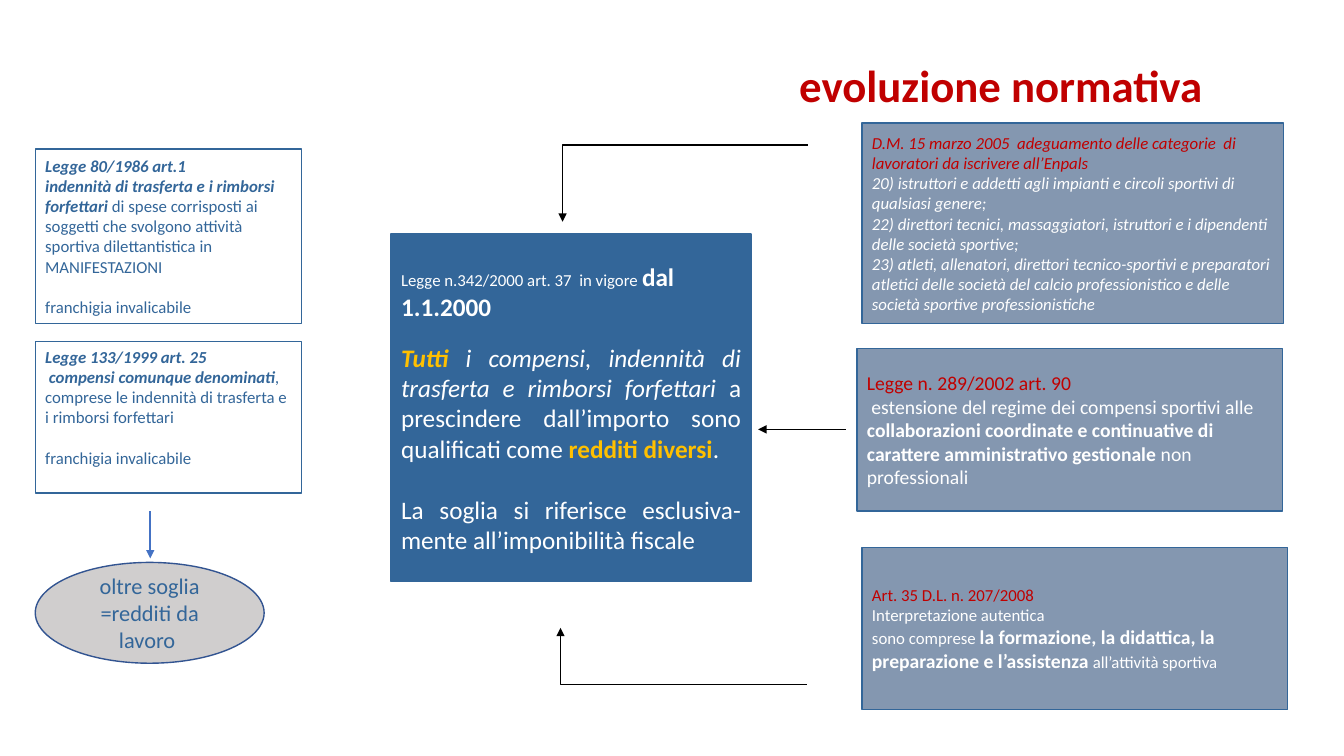
from lxml import etree
from pptx import Presentation
from pptx.dml.color import RGBColor
from pptx.enum.shapes import MSO_CONNECTOR, MSO_SHAPE
from pptx.enum.text import MSO_ANCHOR, PP_ALIGN
from pptx.oxml.ns import qn
from pptx.util import Inches, Pt

RECTANGLE, OVAL = MSO_SHAPE.RECTANGLE, MSO_SHAPE.OVAL
STRAIGHT, ELBOW = MSO_CONNECTOR.STRAIGHT, MSO_CONNECTOR.ELBOW
LEFT, CENTER, RIGHT, JUSTIFY = (PP_ALIGN.LEFT, PP_ALIGN.CENTER,
                                PP_ALIGN.RIGHT, PP_ALIGN.JUSTIFY)
MIDDLE = MSO_ANCHOR.MIDDLE

WHITE = RGBColor(0xFF, 0xFF, 0xFF)
BLACK = RGBColor(0x00, 0x00, 0x00)
RED = RGBColor(0xC0, 0x00, 0x00)
GOLD = RGBColor(0xFF, 0xC0, 0x00)
BLUE = RGBColor(0x33, 0x66, 0x99)
SLATE = RGBColor(0x84, 0x97, 0xB0)
GREY = RGBColor(0xD0, 0xCE, 0xCE)
NAVY = RGBColor(0x32, 0x54, 0x91)
ARROW_BLUE = RGBColor(0x44, 0x72, 0xC4)


def span(text, size=12, color=WHITE, bold=False, italic=False):
    return text, size, color, bold, italic


def para(*spans, align=LEFT, before=0):
    return spans, align, before


class SlideBuilder:
    font = "Calibri"

    def __init__(self, deck):
        self.page = deck.slides.add_slide(deck.slide_layouts[5])

    def add_text(self, frame, paras):
        frame.word_wrap = True
        frame.vertical_anchor = MIDDLE
        for index, (spans, align, before) in enumerate(paras):
            paragraph = frame.paragraphs[0] if index == 0 else frame.add_paragraph()
            paragraph.alignment = align
            paragraph.space_before = Pt(before)
            for text, size, color, bold, italic in spans:
                run = paragraph.add_run()
                run.text = text
                run.font.name = self.font
                run.font.size = Pt(size)
                run.font.bold = bold
                run.font.italic = italic
                run.font.color.rgb = color

    def title(self, place, paras):
        title = self.page.shapes.title
        title.left, title.top, title.width, title.height = map(Inches, place)
        self.add_text(title.text_frame, paras)
        title.text_frame.paragraphs[0].line_spacing = 0.9

    def box(self, place, fill, paras, line=BLUE, shape=RECTANGLE, bottom=0.05):
        box = self.page.shapes.add_shape(shape, *map(Inches, place))
        box.shadow.inherit = False
        box.fill.solid()
        box.fill.fore_color.rgb = fill
        box.line.color.rgb = line
        box.line.width = Pt(1)
        box.text_frame.margin_bottom = Inches(bottom)
        self.add_text(box.text_frame, paras)

    def arrow(self, start, end, kind=STRAIGHT, color=BLACK, width=1):
        arrow = self.page.shapes.add_connector(kind, *map(Inches, start + end))
        arrow.line.color.rgb = color
        arrow.line.width = Pt(width)
        properties = arrow._element.spPr
        etree.SubElement(properties.find(qn("a:ln")), qn("a:tailEnd"), type="triangle")
        etree.SubElement(properties, qn("a:effectLst"))
        if kind == ELBOW:  # turn right above or below the arrowhead
            guides = properties.find(qn("a:prstGeom")).find(qn("a:avLst"))
            etree.SubElement(guides, qn("a:gd"), name="adj1", fmla="val 100000")


def main():
    deck = Presentation()
    deck.slide_width, deck.slide_height = Inches(13.33), Inches(7.5)
    slide = SlideBuilder(deck)

    slide.title((0.23, 0.45, 11.9, 0.84), [
        para(span("evoluzione normativa ", 32, RED, bold=True), align=RIGHT)])

    # Earlier laws, on the left
    threshold = para(span("franchigia invalicabile", color=BLUE), before=14.6)
    slide.box((0.35, 1.48, 2.64, 1.73), WHITE, [
        para(span("Legge 80/1986 art.1", 12, BLUE, True, True)),
        para(span("indennità di trasferta e i rimborsi forfettari ", 12, BLUE, True, True),
             span("di spese corrisposti ai soggetti che svolgono attività sportiva "
                  "dilettantistica in MANIFESTAZIONI", color=BLUE)),
        threshold])
    slide.box((0.35, 3.39, 2.64, 1.5), WHITE, [
        para(span("Legge 133/1999 art. 25", 12, BLUE, True, True)),
        para(span(" ", color=BLUE),
             span("compensi comunque denominati", 12, BLUE, True, True),
             span(",", color=BLUE, italic=True),
             span(" comprese le indennità di trasferta e i rimborsi forfettari",
                  color=BLUE)),
        threshold], bottom=0.25)

    # Law in force, in the centre
    slide.box((3.88, 2.32, 3.57, 3.45), BLUE, [
        para(span("Legge n.342/2000 art. 37  in vigore "),
             span("dal 1.1.2000", 18, bold=True)),
        para(span("Tutti ", 18, GOLD, True, True),
             span("i compensi, indennità di trasferta e rimborsi forfettari ", 18,
                  italic=True),
             span("a prescindere dall’importo sono qualificati come ", 18),
             span("redditi diversi", 18, GOLD, bold=True),
             span(". ", 18), align=JUSTIFY, before=14.6),
        para(span("La soglia si riferisce esclusiva-mente all’imponibilità fiscale ", 18),
             align=JUSTIFY, before=22)])

    # Later provisions, on the right
    slide.box((8.55, 1.22, 4.18, 1.99), SLATE, [
        para(span("D.M. 15 marzo 2005  adeguamento delle categorie  di lavoratori "
                  "da iscrivere all’Enpals", color=RED, italic=True)),
        para(span("20) istruttori e addetti agli impianti e circoli sportivi di "
                  "qualsiasi genere;", italic=True)),
        para(span("22) direttori tecnici, massaggiatori, istruttori e i dipendenti "
                  "delle società sportive;", italic=True)),
        para(span("23) atleti, allenatori, direttori tecnico-sportivi e preparatori "
                  "atletici delle società del calcio professionistico e delle società "
                  "sportive professionistiche", italic=True))])
    slide.box((8.5, 3.46, 4.22, 1.61), SLATE, [
        para(span("Legge n. 289/2002 art. 90", 14, RED)),
        para(span(" estensione del regime dei compensi sportivi alle ", 14),
             span("collaborazioni coordinate e continuative di carattere "
                  "amministrativo gestionale ", 14, bold=True),
             span("non professionali", 14))])
    slide.box((8.55, 5.43, 4.22, 1.61), SLATE, [
        para(span("Art. 35 D.L. n. 207/2008", color=RED)),
        para(span("Interpretazione autentica")),
        para(span("sono comprese "),
             span("la formazione, la didattica, la preparazione e l’assistenza", 14,
                  bold=True),
             span(" all’attività sportiva"))])

    # Arrows towards the central law
    slide.arrow((8.39, 4.26), (7.52, 4.26))
    slide.arrow((8.01, 1.44), (5.58, 2.2), ELBOW)
    slide.arrow((8, 6.79), (5.56, 6.23), ELBOW)

    # Outcome above the threshold
    slide.arrow((1.49, 5.07), (1.49, 5.54), color=ARROW_BLUE, width=1.5)
    slide.box((0.35, 5.58, 2.27, 1), GREY, [
        para(span("oltre soglia =redditi da lavoro ", 16, BLUE), align=CENTER)],
        line=NAVY, shape=OVAL)

    deck.save("out.pptx")


if __name__ == "__main__":
    main()
